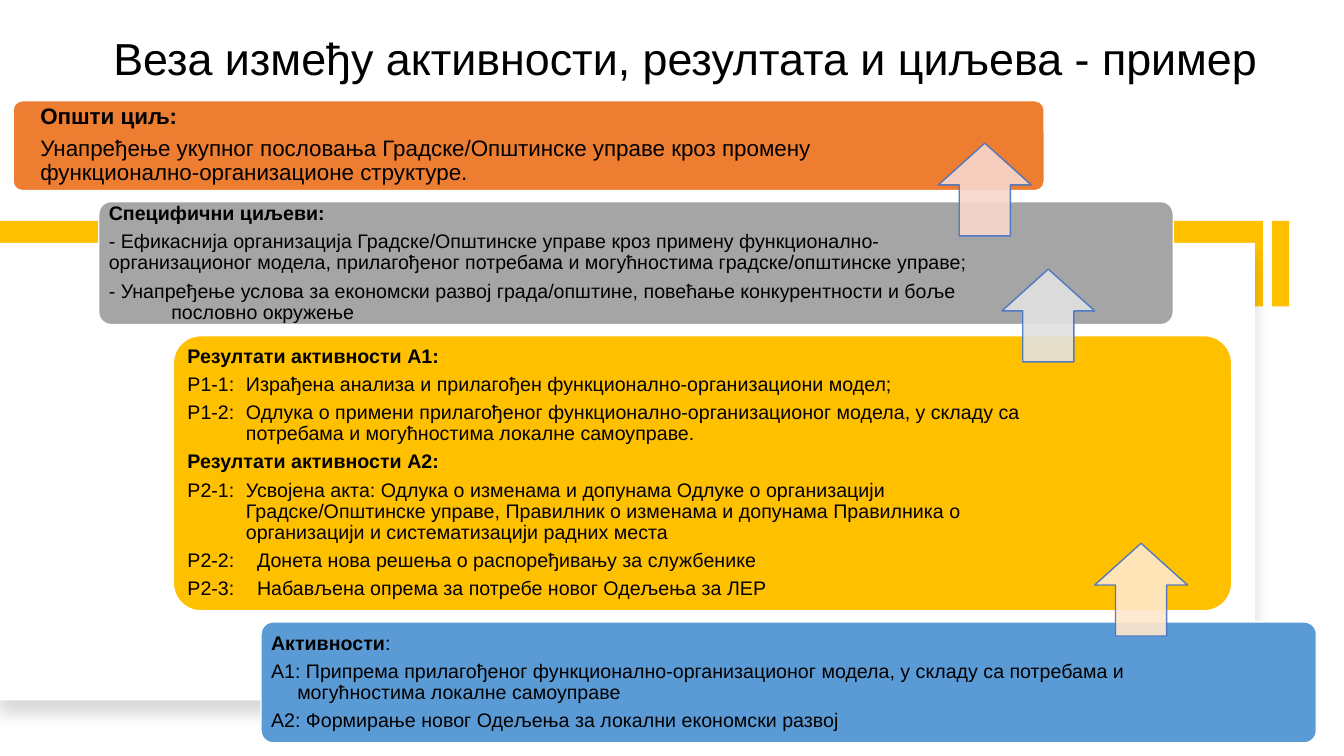
from dataclasses import dataclass

from lxml.etree import SubElement
from pptx import Presentation
from pptx.dml.color import RGBColor
from pptx.enum.shapes import MSO_SHAPE
from pptx.enum.text import MSO_ANCHOR, MSO_AUTO_SIZE, PP_ALIGN
from pptx.oxml.ns import qn
from pptx.util import Emu, Pt


@dataclass(frozen=True)
class Theme:
    font: str = "Arial"
    text: str = "000000"
    paper: str = "FFFFFF"
    gold: str = "FFC000"
    orange: str = "ED7D31"
    gray: str = "A5A5A5"
    blue: str = "5B9BD5"
    arrow_line: str = "4472C4"
    arrow_orange: str = "F8D7CE"
    arrow_gray: str = "E1E1E1"
    arrow_gold: str = "FFE8CC"
    title_size: int = 32
    goal_size: int = 16
    body_size: int = 14
    line_spacing: float = 0.9
    space_after: float = 0.35
    arrow_alpha: int = 90


class SlideBuilder:
    SCALE = 9144

    def __init__(self, presentation, theme):
        self.theme = theme
        self.slide = presentation.slides.add_slide(presentation.slide_layouts[5])

    def px(self, *lengths):
        return [Emu(length * self.SCALE) for length in lengths]

    def add_run(self, paragraph, text, size, bold=False):
        run = paragraph.add_run()
        run.text = text
        run.font.name = self.theme.font
        run.font.size = Pt(size)
        run.font.bold = bold
        run.font.color.rgb = RGBColor.from_string(self.theme.text)

    def title(self, box, text):
        shape = self.slide.shapes.title
        shape.left, shape.top, shape.width, shape.height = self.px(*box)
        frame = shape.text_frame
        frame.auto_size = MSO_AUTO_SIZE.NONE
        frame.vertical_anchor = MSO_ANCHOR.BOTTOM
        paragraph = frame.paragraphs[0]
        paragraph.alignment = PP_ALIGN.CENTER
        paragraph.line_spacing = self.theme.line_spacing
        self.add_run(paragraph, text, self.theme.title_size)

    def shape(self, kind, box, fill, line=None, rotation=0, adjustments=()):
        shape = self.slide.shapes.add_shape(kind, *self.px(*box))
        shape.shadow.inherit = False
        shape.rotation = rotation
        for index, value in enumerate(adjustments):
            shape.adjustments[index] = value
        shape.fill.solid()
        shape.fill.fore_color.rgb = RGBColor.from_string(fill)
        if line:
            shape.line.color.rgb = RGBColor.from_string(line)
            shape.line.width = Pt(1)
        else:
            shape.line.fill.background()
        return shape

    def panel(self, box):
        shape = self.shape(MSO_SHAPE.RECTANGLE, box, self.theme.paper)
        effects = shape.element.spPr.find(qn("a:effectLst"))
        shadow = SubElement(effects, qn("a:outerShdw"), blurRad=str(Pt(11)),
                            dist=str(Pt(10)), dir="5400000")
        color = SubElement(shadow, qn("a:srgbClr"), val=self.theme.text)
        SubElement(color, qn("a:alpha"), val="15000")

    def card(self, box, fill):
        self.shape(MSO_SHAPE.ROUNDED_RECTANGLE, box, fill, self.theme.paper,
                   adjustments=(0.1,))

    def text(self, box, paragraphs, size, inset):
        frame = self.slide.shapes.add_textbox(*self.px(*box)).text_frame
        frame.word_wrap = True
        frame.vertical_anchor = MSO_ANCHOR.MIDDLE
        (margin,) = self.px(inset)
        frame.margin_left = frame.margin_right = margin
        frame.margin_top = frame.margin_bottom = margin
        for index, (runs, left, first) in enumerate(paragraphs):
            paragraph = frame.paragraphs[0] if index == 0 else frame.add_paragraph()
            paragraph.line_spacing = self.theme.line_spacing
            paragraph.space_after = Pt(size * self.theme.space_after)
            margin_left, indent = self.px(left, first)
            properties = paragraph._p.get_or_add_pPr()
            properties.set("marL", str(margin_left))
            properties.set("indent", str(indent))
            for text, bold in runs:
                self.add_run(paragraph, text, size, bold)

    def arrow(self, left, top, fill):
        shape = self.shape(MSO_SHAPE.DOWN_ARROW, (left, top, 92, 92), fill,
                           self.theme.arrow_line, 180, (0.55, 0.45))
        for color in shape.element.spPr.iter(qn("a:srgbClr")):
            SubElement(color, qn("a:alpha"), val=str(self.theme.arrow_alpha * 1000))


def heading(text, left=0):
    return [(text, True)], left, 0


def entry(text, left=0):
    return [(text, False)], left, 0


def hanging(text, left):
    return [(text, False)], left, -left


def main():
    theme = Theme()
    presentation = Presentation()
    presentation.slide_width = Emu(12192000)
    presentation.slide_height = Emu(6858000)
    builder = SlideBuilder(presentation, theme)

    builder.title((46, 0, 1269, 90), "Веза између активности, резултата и циљева - пример")
    builder.shape(MSO_SHAPE.RECTANGLE, (1228, 253, 85, 17), theme.gold, rotation=90)
    builder.shape(MSO_SHAPE.RECTANGLE, (0, 219, 1253, 85), theme.gold)
    builder.panel((0, 241, 1245, 454))

    goal = [
        heading("Општи циљ:", 18),
        entry("Унапређење укупног пословања Градске/Општинске управе кроз промену "
              "функционално-организационе структуре.", 18),
    ]
    objectives = [
        heading("Специфични циљеви:"),
        entry("- Ефикаснија организација Градске/Општинске управе кроз примену "
              "функционално-организационог модела, прилагођеног потребама и "
              "могућностима градске/општинске управе;"),
        hanging("- Унапређење услова за економски развој града/општине, повећање "
                "конкурентности и боље пословно окружење", 62),
    ]
    results = [
        heading("Резултати активности А1:"),
        hanging("Р1-1:\tИзрађена анализа и прилагођен функционално-организациони модел;", 58),
        hanging("Р1-2:\tОдлука о примени прилагођеног функционално-организационог "
                "модела, у складу са потребама и могућностима локалне самоуправе.", 58),
        heading("Резултати активности А2:"),
        hanging("Р2-1:\tУсвојена акта: Одлука о изменама и допунама Одлуке о "
                "организацији Градске/Општинске управе, Правилник о изменама и "
                "допунама Правилника о организацији и систематизацији радних места", 58),
        hanging("Р2-2:\tДонета нова решења о распоређивању за службенике", 69),
        hanging("Р2-3:\tНабављена опрема за потребе новог Одељења за ЛЕР", 69),
    ]
    activities = [
        ([("Активности", True), (":", False)], 0, 0),
        hanging("А1: Припрема прилагођеног функционално-организационог модела, у "
                "складу са потребама и могућностима локалне самоуправе", 26),
        hanging("А2: Формирање новог Одељења за локални економски развој", 26),
    ]
    levels = [
        ((13, 100, 1023, 89), theme.orange, (15, 102, 864, 84), goal, theme.goal_size, 7),
        ((98, 200, 1066, 122), theme.gray, (102, 204, 876, 115), objectives, theme.body_size, 6),
        ((172, 333, 1050, 273), theme.gold, (180, 341, 855, 257), results, theme.body_size, 6),
        ((259, 617, 1047, 120), theme.blue, (263, 621, 860, 113), activities, theme.body_size, 6),
    ]
    for card_box, fill, text_box, paragraphs, size, inset in levels:
        builder.card(card_box, fill)
        builder.text(text_box, paragraphs, size, inset)

    builder.arrow(931, 142, theme.arrow_orange)
    builder.arrow(994, 267, theme.arrow_gray)
    builder.arrow(1086, 539, theme.arrow_gold)
    presentation.save("out.pptx")


if __name__ == "__main__":
    main()
